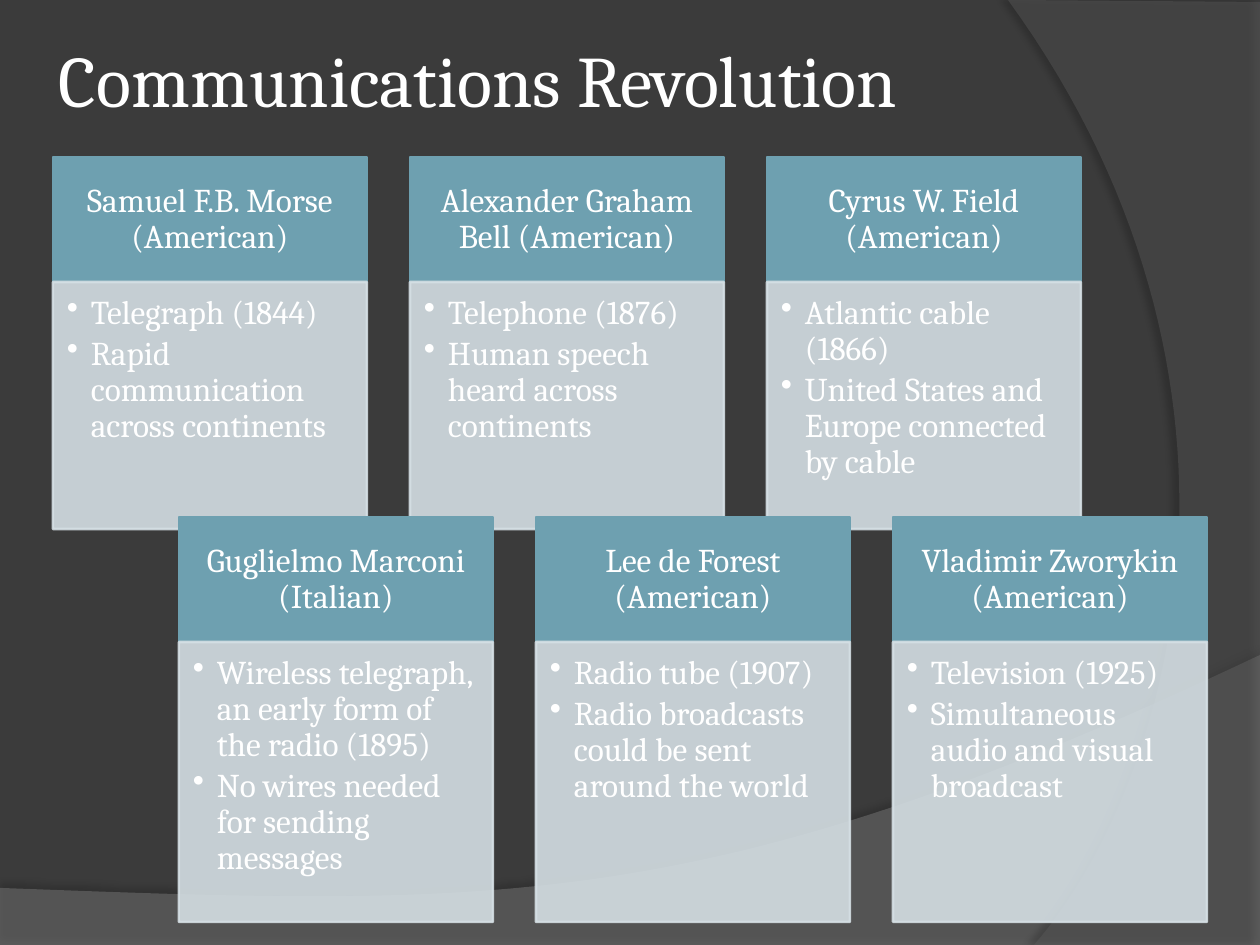
from dataclasses import dataclass

from lxml.etree import SubElement
from pptx import Presentation
from pptx.dml.color import RGBColor
from pptx.enum.shapes import MSO_SHAPE as Preset
from pptx.enum.text import MSO_ANCHOR as Anchor, PP_ALIGN as Align
from pptx.oxml.ns import qn
from pptx.util import Emu, Pt

EMU_PER_PX = 914400 / 126
FONT = "Cambria"
WHITE, TEAL, MIST = "FFFFFF", "6EA0B0", "D5DFE4"
CARD_WIDTH, HEADER_HEIGHT, COLUMN_PITCH = 314, 125, 357
BULLET_INDENT = 24


@dataclass
class Inventor:
    name: str
    bullets: tuple[str, str]


@dataclass
class Row:
    left: int
    top: int
    body_height: int
    inventors: list[Inventor]


@dataclass
class Wave:
    outline: list[tuple[int, int]]
    curve: list[tuple[int, int]]
    color: str
    opacity: int
    shadow_opacity: int
    shadow_distance: float
    shadow_angle: int


WAVES = [
    Wave([(0, 888), (0, 946), (1260, 946)],
         [(1260, 655), (704, 919), (493, 906), (0, 888)], "7F7F7F", 45, 35, 3.5, 270),
    Wave([(1260, 2), (1260, 945)],
         [(1034, 945), (1178, 780), (1283, 378), (1008, 0)], "5E5E5E", 40, 45, 4, 180),
]

ROWS = [
    Row(53, 157, 247, [
        Inventor("Samuel F.B. Morse (American)",
                 ("Telegraph (1844)", "Rapid communication across continents")),
        Inventor("Alexander Graham Bell (American)",
                 ("Telephone (1876)", "Human speech heard across continents")),
        Inventor("Cyrus W. Field (American)",
                 ("Atlantic cable (1866)", "United States and Europe connected by cable")),
    ]),
    Row(179, 517, 280, [
        Inventor("Guglielmo Marconi (Italian)",
                 ("Wireless telegraph, an early form of the radio (1895)",
                  "No wires needed for sending messages")),
        Inventor("Lee de Forest (American)",
                 ("Radio tube (1907)", "Radio broadcasts could be sent around the world")),
        Inventor("Vladimir Zworykin (American)",
                 ("Television (1925)", "Simultaneous audio and visual broadcast")),
    ]),
]


def px(length: float) -> Emu:
    """Turn pixels into EMU."""
    return Emu(round(length * EMU_PER_PX))


def rgb(color: str) -> RGBColor:
    """Turn a hex string into a colour."""
    return RGBColor.from_string(color)


def set_opacity(fill_parent, percent: int) -> None:
    """Make the solid fill below an element partly transparent."""
    color = fill_parent.find(qn("a:solidFill"))[0]
    SubElement(color, qn("a:alpha"), val=str(percent * 1000))


def set_insets(frame, left: int, top: int, right: int, bottom: int) -> None:
    """Set the inner margins of a text frame."""
    frame.margin_left, frame.margin_top = px(left), px(top)
    frame.margin_right, frame.margin_bottom = px(right), px(bottom)


def set_font(paragraph, size: float) -> None:
    """Give a paragraph the white slide font."""
    font = paragraph.font
    font.name, font.size, font.color.rgb = FONT, Pt(size), rgb(WHITE)


def add_bullet(paragraph) -> None:
    """Give a paragraph a hanging round bullet."""
    properties = paragraph._p.get_or_add_pPr()
    properties.set("marL", str(px(BULLET_INDENT)))
    properties.set("indent", str(-px(BULLET_INDENT)))
    bullet = properties.makeelement(qn("a:buChar"), {"char": "•"})
    properties.find(qn("a:defRPr")).addprevious(bullet)


def curve_points(curve: list[tuple[int, int]], steps: int = 60) -> list[tuple[float, float]]:
    """Sample a cubic Bézier curve."""
    points = []
    for step in range(steps + 1):
        t = step / steps
        weights = ((1 - t) ** 3, 3 * t * (1 - t) ** 2, 3 * t * t * (1 - t), t ** 3)
        points.append(tuple(sum(w * point[axis] for w, point in zip(weights, curve))
                            for axis in (0, 1)))
    return points


def add_wave(slide, wave: Wave) -> None:
    """Draw a translucent background wave with a soft shadow."""
    start, *rest = [*wave.outline, *curve_points(wave.curve)]
    builder = slide.shapes.build_freeform(px(start[0]), px(start[1]))
    builder.add_line_segments([(px(x), px(y)) for x, y in rest])
    shape = builder.convert_to_shape()
    shape.fill.solid()
    shape.fill.fore_color.rgb = rgb(wave.color)
    set_opacity(shape._element.spPr, wave.opacity)
    shape.line.fill.background()
    shape.shadow.inherit = False
    effects = shape._element.spPr.find(qn("a:effectLst"))
    shadow = SubElement(effects, qn("a:outerShdw"), blurRad=str(Pt(4)),
                        dist=str(Pt(wave.shadow_distance)),
                        dir=str(wave.shadow_angle * 60000), rotWithShape="0")
    color = SubElement(shadow, qn("a:srgbClr"), val="000000")
    SubElement(color, qn("a:alpha"), val=str(wave.shadow_opacity * 1000))


def add_panel(slide, left: int, top: int, height: int, color: str):
    """Draw one filled part of a card."""
    shape = slide.shapes.add_shape(Preset.RECTANGLE, px(left), px(top),
                                   px(CARD_WIDTH), px(height))
    shape.shadow.inherit = False
    shape.fill.solid()
    shape.fill.fore_color.rgb = rgb(color)
    shape.line.color.rgb = rgb(color)
    shape.line.width = Pt(1.5)
    shape.text_frame.word_wrap = True
    return shape


def add_card(slide, inventor: Inventor, left: int, top: int, body_height: int) -> None:
    """Draw an inventor's name above a bulleted panel."""
    header = add_panel(slide, left, top, HEADER_HEIGHT, TEAL)
    frame = header.text_frame
    frame.vertical_anchor = Anchor.MIDDLE
    set_insets(frame, 19, 10, 19, 10)
    paragraph = frame.paragraphs[0]
    paragraph.text, paragraph.alignment = inventor.name, Align.CENTER
    paragraph.line_spacing = 0.9
    set_font(paragraph, 19)

    body = add_panel(slide, left, top + HEADER_HEIGHT, body_height, MIST)
    set_opacity(body._element.spPr, 90)
    set_opacity(body.line._ln, 90)
    frame = body.text_frame
    frame.vertical_anchor = Anchor.TOP
    set_insets(frame, 14, 14, 19, 21)
    frame.text = "\n".join(inventor.bullets)
    for paragraph in frame.paragraphs:
        paragraph.level, paragraph.alignment = 1, Align.LEFT
        paragraph.line_spacing, paragraph.space_after = 0.9, Pt(2.85)
        set_font(paragraph, 19)
        add_bullet(paragraph)


def add_title(slide, text: str) -> None:
    """Fill the title placeholder and bring it in front of the waves."""
    title = slide.shapes.title
    title.left, title.top, title.width, title.height = px(53), px(0), px(1029), px(157)
    frame = title.text_frame
    frame.text, frame.word_wrap = text, True
    frame.vertical_anchor = Anchor.MIDDLE
    set_insets(frame, 6, 6, 6, 6)
    frame.paragraphs[0].alignment = Align.LEFT
    set_font(frame.paragraphs[0], 41.4)
    title.element.getparent().append(title.element)


def main() -> None:
    """Build and save the slide."""
    presentation = Presentation()
    presentation.slide_width, presentation.slide_height = px(1260), px(945)
    slide = presentation.slides.add_slide(presentation.slide_layouts[5])
    slide.background.fill.solid()
    slide.background.fill.fore_color.rgb = rgb("3B3B3B")
    for wave in WAVES:
        add_wave(slide, wave)
    add_title(slide, "Communications Revolution")
    for row in ROWS:
        for column, inventor in enumerate(row.inventors):
            add_card(slide, inventor, row.left + column * COLUMN_PITCH,
                     row.top, row.body_height)
    presentation.save("out.pptx")


if __name__ == "__main__":
    main()
